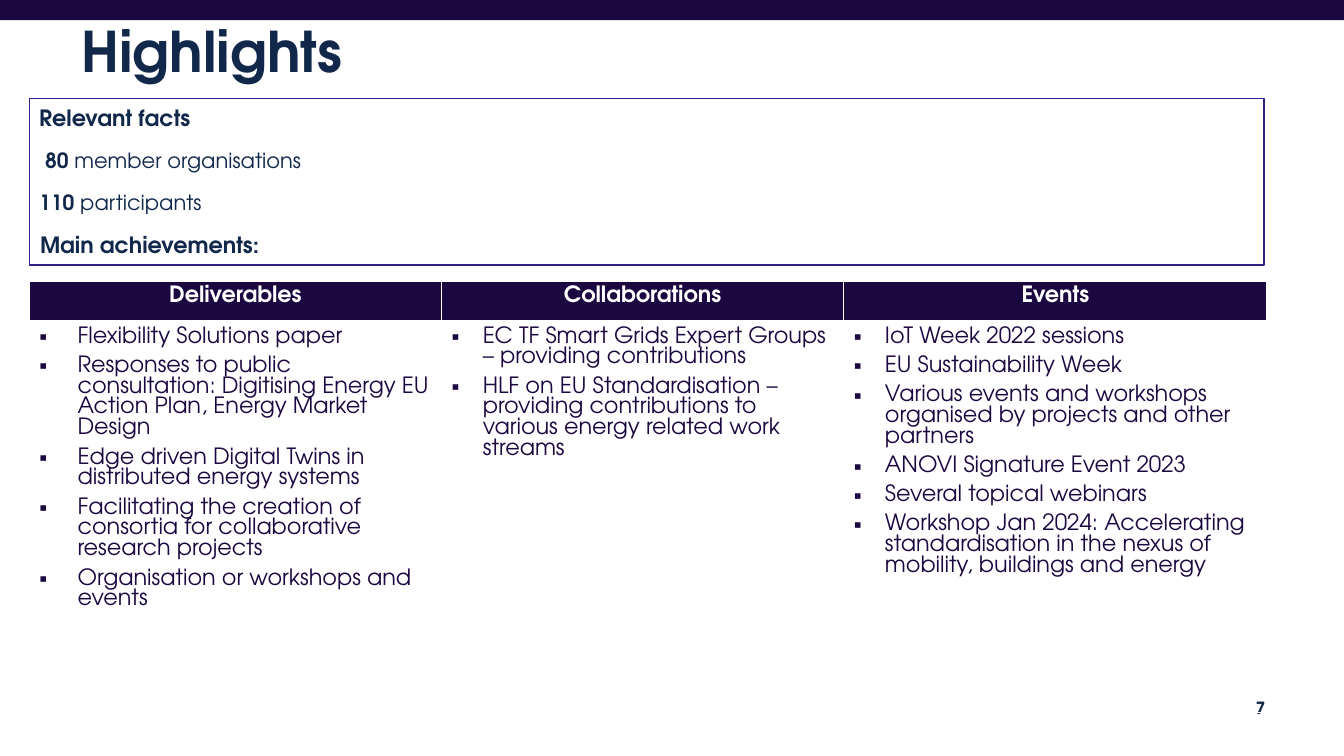
from lxml import etree
from pptx import Presentation, util as u
from pptx.dml.color import RGBColor
from pptx.enum import shapes, text
from pptx.oxml.ns import qn

# Grid: 133.33 columns by 75 rows
COLS, ROWS = 133.33, 75
STEP = u.Inches(0.1)
FACE = "TeX Gyre Adventor"
NAVY, PLUM, EDGE, WHITE = "11284B", "1C0840", "351D8C", "FFFFFF"
ALIGN = text.PP_ALIGN

# Runs, alignment, left indent
FACTS = [
    ([("Relevant facts", 16, True)], ALIGN.JUSTIFY, 0),
    ([(" 80", 15, True), (" member organisations", 15, False)], ALIGN.LEFT, 0),
    ([("110", 15, True), (" participants", 15, False)], ALIGN.LEFT, 0),
    ([("Main achievements:", 16, True)], ALIGN.LEFT, 0.1),
]
# Heading, column width, bullet indent, items
TOPICS = [
    ("Deliverables", 40.9, 3.8, [
        "Flexibility Solutions paper",
        "Responses to public consultation: Digitising Energy EU Action Plan, "
        "Energy Market Design",
        "Edge driven Digital Twins in distributed energy systems",
        "Facilitating the creation of consortia for collaborative research projects",
        "Organisation or workshops and events"]),
    ("Collaborations", 39.9, 3.1, [
        "EC TF Smart Grids Expert Groups – providing contributions",
        "HLF on EU Standardisation – providing contributions to various "
        "energy related work streams"]),
    ("Events", 42, 3.1, [
        "IoT Week 2022 sessions",
        "EU Sustainability Week",
        "Various events and workshops organised by projects and other partners",
        "ANOVI Signature Event 2023",
        "Several topical webinars",
        "Workshop Jan 2024: Accelerating standardisation in the nexus of "
        "mobility, buildings and energy"]),
]


def grid(*cells):
    return [round(n * STEP) for n in cells]


def color(code):
    return RGBColor.from_string(code)


def assign(item, values):
    for name, value in values.items():
        setattr(item, name, value)


def write(para, words, size, tint, bold=False, face=FACE, **form):
    assign(para, form)
    run = para.add_run()
    run.text = words
    assign(run.font, {"size": u.Pt(size), "bold": bold, "name": face})
    run.font.color.rgb = color(tint)


def lines(frame, count):
    """Return the frame's paragraphs, extended to the given count."""
    return [frame.paragraphs[0]] + [frame.add_paragraph() for _ in range(count - 1)]


def panel(slide, place, fill, line=None):
    box = slide.shapes.add_shape(shapes.MSO_SHAPE.RECTANGLE, *grid(*place))
    box.shadow.inherit = False
    box.fill.solid()
    box.fill.fore_color.rgb = color(fill)
    if line:
        box.line.color.rgb = color(line)
        box.line.width = u.Pt(1)
    else:
        box.line.fill.background()
    return box


def label(slide, place, words, size, **form):
    frame = slide.shapes.add_textbox(*grid(*place)).text_frame
    assign(frame, {"word_wrap": True, "vertical_anchor": text.MSO_ANCHOR.MIDDLE})
    write(frame.paragraphs[0], words, size, NAVY, **form)


def inset(para, left, first=0):
    props = para._p.get_or_add_pPr()
    for name, size in zip(("marL", "indent"), grid(left, first)):
        props.set(name, str(size))
    return props


def bullet(para, indent):
    props = inset(para, indent, -indent)
    etree.SubElement(props, qn("a:buFont")).set("typeface", "Arial")
    etree.SubElement(props, qn("a:buChar")).set("char", "▪")


def border(cell, low):
    """Draw white cell edges; low is the width of the bottom one."""
    props = cell._tc.get_or_add_tcPr()
    for spot, (side, width) in enumerate(zip("LRTB", (1, 1, 1, low))):
        edge = etree.Element(qn("a:ln" + side), w=str(u.Pt(width)))
        fill = etree.SubElement(edge, qn("a:solidFill"))
        etree.SubElement(fill, qn("a:srgbClr")).set("val", WHITE)
        props.insert(spot, edge)


def facts(slide):
    box = panel(slide, (2.9, 9.8, 122.5, 16.5), WHITE, EDGE)
    frame = box.text_frame
    assign(frame, {"word_wrap": True, "vertical_anchor": text.MSO_ANCHOR.TOP,
                   "auto_size": text.MSO_AUTO_SIZE.SHAPE_TO_FIT_TEXT})
    for para, (runs, align, left) in zip(lines(frame, len(FACTS)), FACTS):
        inset(para, left)
        for words, size, bold in runs:
            write(para, words, size, NAVY, bold, alignment=align, space_after=u.Pt(12))


def topics(slide):
    width = sum(topic[1] for topic in TOPICS)
    place = grid(2.9, 27.9, width, 42.8)
    table = slide.shapes.add_table(2, len(TOPICS), *place).table
    for row, height in zip(table.rows, grid(4, 38.8)):
        row.height = height
    for col, (title, wide, indent, items) in enumerate(TOPICS):
        table.columns[col].width = grid(wide)[0]
        head, body = table.cell(0, col), table.cell(1, col)
        head.fill.solid()
        head.fill.fore_color.rgb = color(PLUM)
        body.fill.background()
        border(head, 3)
        border(body, 1)
        write(head.text_frame.paragraphs[0], title, 16, WHITE, True,
              alignment=ALIGN.CENTER)
        for para, item in zip(lines(body.text_frame, len(items)), items):
            bullet(para, indent)
            write(para, item, 16, PLUM, alignment=ALIGN.LEFT, space_after=u.Pt(6))


def main():
    deck = Presentation()
    assign(deck, dict(zip(("slide_width", "slide_height"), grid(COLS, ROWS))))
    slide = deck.slides.add_slide(deck.slide_layouts[6])

    # Top band and page number
    panel(slide, (0, 0, COLS, 2), PLUM)
    for face, bold in ((FACE, True), ("Arial", False)):
        label(slide, (96.5, 68.2, 30, 4), "7", 12, face=face, bold=bold,
              alignment=ALIGN.RIGHT)

    # Facts, title and achievements
    facts(slide)
    label(slide, (7.1, 1.8, 126.2, 7.2), "Highlights", 40, bold=True, line_spacing=0.9)
    topics(slide)
    deck.save("out.pptx")


if __name__ == "__main__":
    main()
